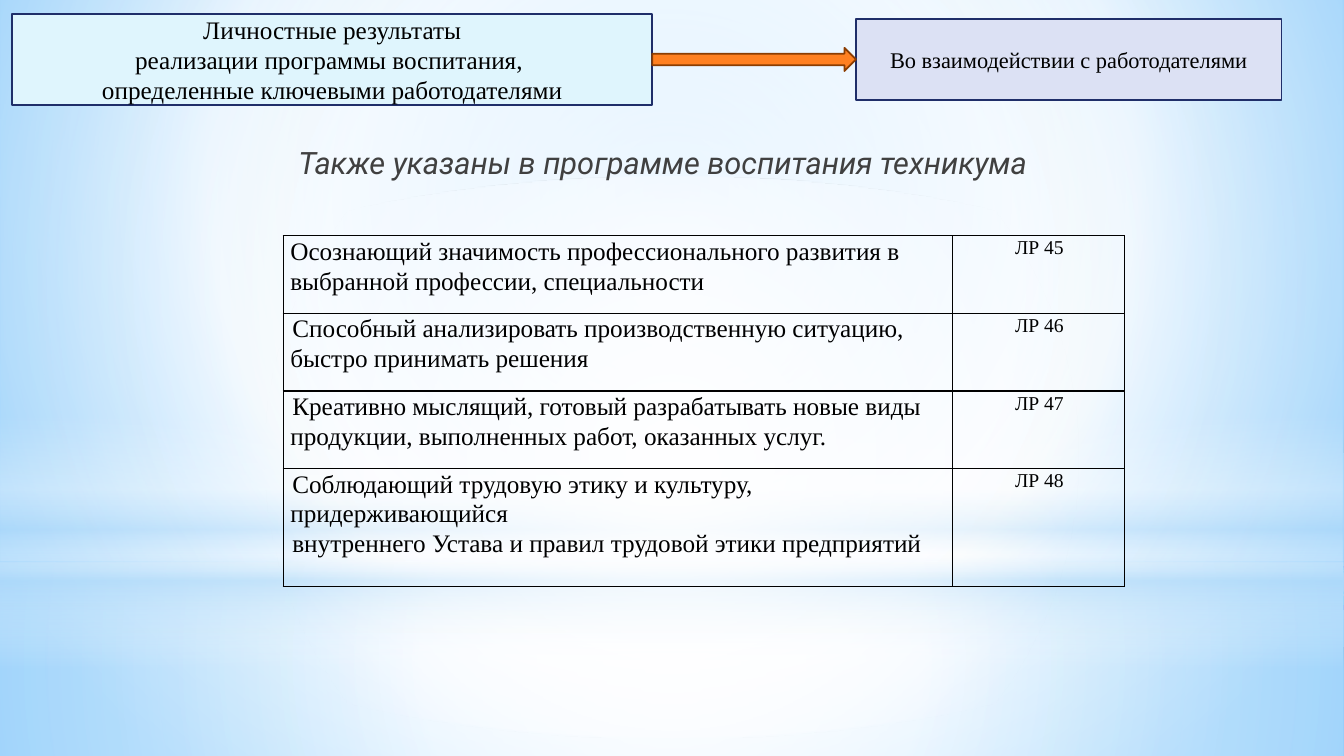
import pptx
import pptx.util
import pptx.oxml
import pptx.oxml.ns
import pptx.dml.color
import pptx.enum.shapes
import pptx.enum.text

Inches, Pt = pptx.util.Inches, pptx.util.Pt
qn = pptx.oxml.ns.qn
SHAPE = pptx.enum.shapes.MSO_SHAPE
ALIGN = pptx.enum.text.PP_ALIGN
ANCHOR = pptx.enum.text.MSO_ANCHOR

HEX = {
    "white": "FFFFFF", "mist": "B4DCFA", "sky": "9ED5FF", "blue": "5BB9FF",
    "cyan": "DFF5FD", "lilac": "DCE1F4", "navy": "1F2E69",
    "orange": "FF8021", "brown": "8B3D02", "black": "000000", "gray": "404040",
}
SERIF = "Times New Roman"
GOALS = [
    (["Осознающий значимость профессионального развития в выбранной "
      "профессии, специальности"], "ЛР 45"),
    (["Способный анализировать производственную ситуацию, быстро "
      "принимать решения"], "ЛР 46"),
    (["Креативно мыслящий, готовый разрабатывать новые виды продукции, "
      "выполненных работ, оказанных услуг."], "ЛР 47"),
    (["Соблюдающий трудовую этику и культуру, придерживающийся",
      "внутреннего Устава и правил трудовой этики предприятий"], "ЛР 48"),
]


def color(name):
    return pptx.dml.color.RGBColor.from_string(HEX[name])


def shade(fill, owner, stops, focus=None):
    """Fill with (position, colour, opacity) stops: around focus, or downwards."""
    fill.solid()
    marks = "".join(
        f'<a:gs pos="{pos * 1000}"><a:srgbClr val="{HEX[name]}">'
        f'<a:alpha val="{alpha * 1000}"/></a:srgbClr></a:gs>'
        for pos, name, alpha in stops)
    if focus:
        sides = " ".join(f'{side}="{part * 1000}"' for side, part in zip("ltrb", focus))
        way = f'<a:path path="circle"><a:fillToRect {sides}/></a:path>'
    else:
        way = '<a:lin ang="5400000" scaled="0"/>'
    grad = pptx.oxml.parse_xml(
        f'<a:gradFill {pptx.oxml.ns.nsdecls("a")} rotWithShape="1">'
        f'<a:gsLst>{marks}</a:gsLst>{way}</a:gradFill>')
    solid = owner.find(qn("a:solidFill"))
    owner.replace(solid, grad)


def write(frame, lines, size, font=SERIF, ink="black", align=ALIGN.LEFT,
          italic=False, indent=0, **form):
    """Write one paragraph a line; form holds further paragraph formats."""
    frame.word_wrap = True
    for n, line in enumerate(lines):
        para = frame.add_paragraph() if n else frame.paragraphs[0]
        para.alignment = align
        for key, value in form.items():
            setattr(para, key, value)
        props = para._p.get_or_add_pPr()
        props.set("marL", "0")
        props.set("indent", str(Inches(indent)))
        run = para.add_run()
        run.text = line
        for key, value in {"size": Pt(size), "name": font, "italic": italic}.items():
            setattr(run.font, key, value)
        run.font.color.rgb = color(ink)


def add(slide, kind, box):
    shape = slide.shapes.add_shape(kind, *map(Inches, box))
    shape.shadow.inherit = False
    return shape


def block(slide, kind, box, fill, edge):
    shape = add(slide, kind, box)
    shape.fill.solid()
    shape.fill.fore_color.rgb = color(fill)
    shape.line.color.rgb = color(edge)
    shape.line.width = Pt(1.25)
    return shape


def backdrop(slide, box):
    left, top, width, height = box
    shade(slide.background.fill, slide.element.find(".//" + qn("p:bgPr")),
          [(0, "sky", 100), (60, "white", 100), (100, "blue", 100)], (20, 10, 20, 60))
    mid = (50, 50, 50, 50)
    split = 5.58
    glows = [
        (SHAPE.RECTANGLE, split, height - split, mid,
         [(0, "white", 91), (37, "white", 76), (100, "mist", 79)]),
        (SHAPE.RECTANGLE, 0, split, mid,
         [(0, "white", 89), (48, "white", 62), (100, "mist", 79)]),
        (SHAPE.RECTANGLE, 4.12, 2.5, None,
         [(0, "white", 0), (29, "white", 30), (45, "mist", 40),
          (55, "white", 26), (65, "mist", 60), (100, "white", 0)]),
        (SHAPE.OVAL, 1.75, split, mid, [(0, "white", 100), (56, "white", 0)]),
    ]
    for kind, down, tall, focus, stops in glows:
        shape = add(slide, kind, (left, top + down, width, tall))
        shape.line.fill.background()
        shade(shape.fill, shape.element.spPr, stops, focus)


def header(slide, box):
    """Two boxes at the ends of the band, with an arrow from one to the other."""
    left, top, width, height = box
    wide, narrow, low, thick = 6.35, 4.22, 0.8, 0.23
    parts = [
        ((left, top, wide, height), "cyan", 18,
         ["Личностные результаты", "реализации программы воспитания, ",
          "определенные ключевыми работодателями"]),
        ((left + width - narrow, top + (height - low) / 2, narrow, low), "lilac", 16,
         ["Во взаимодействии с работодателями"]),
    ]
    for place, fill, size, lines in parts:
        shape = block(slide, SHAPE.RECTANGLE, place, fill, "navy")
        shape.text_frame.vertical_anchor = ANCHOR.MIDDLE
        write(shape.text_frame, lines, size, align=ALIGN.CENTER)
    gap = width - wide - narrow
    block(slide, SHAPE.RIGHT_ARROW,
          (left + wide, top + (height - thick) / 2, gap, thick), "orange", "brown")


def heading(slide, box):
    title = slide.shapes.title
    for key, value in zip(("left", "top", "width", "height"), box):
        setattr(title, key, Inches(value))
    title.text_frame.vertical_anchor = ANCHOR.TOP
    title.text_frame.auto_size = pptx.enum.text.MSO_AUTO_SIZE.NONE
    write(title.text_frame, ["Также указаны в программе воспитания техникума"],
          22, "Roboto", "gray", italic=True, indent=0.05, space_after=Pt(3))
    title.element.getparent().append(title.element)


def border(cell):
    props = cell._tc.get_or_add_tcPr()
    for n, side in enumerate(("lnL", "lnR", "lnT", "lnB")):
        props.insert(n, pptx.oxml.parse_xml(
            f'<a:{side} {pptx.oxml.ns.nsdecls("a")} w="{Pt(1)}"><a:solidFill>'
            f'<a:srgbClr val="{HEX["black"]}"/></a:solidFill></a:{side}>'))


def goals(slide, box):
    table = slide.shapes.add_table(len(GOALS), 2, *map(Inches, box)).table
    table.first_row = table.horz_banding = False
    code = 1.7
    for col, width in zip(table.columns, (box[2] - code, code)):
        col.width = Inches(width)
    for n, (row, (lines, mark)) in enumerate(zip(table.rows, GOALS)):
        row.height = Inches(0.77 if len(lines) == 1 else 1.17)
        looks = [(lines, 18, ALIGN.LEFT, 0.02 if n else 0),
                 ([mark], 14, ALIGN.CENTER, 0.02)]
        for cell, (words, size, align, indent) in zip(row.cells, looks):
            cell.fill.background()
            cell.margin_left = cell.margin_right = Inches(0.07)
            cell.margin_top = cell.margin_bottom = 0
            write(cell.text_frame, words, size, align=align, indent=indent,
                  line_spacing=1.07)
            border(cell)


def main():
    deck = pptx.Presentation()
    deck.slide_width, deck.slide_height = Inches(13.33), Inches(7.5)
    slide = deck.slides.add_slide(deck.slide_layouts[5])
    backdrop(slide, (0, 0, 13.33, 7.5))
    header(slide, (0.12, 0.14, 12.59, 0.9))
    goals(slide, (2.81, 2.34, 8.34, 3.48))
    heading(slide, (2.81, 1.38, 9.33, 0.57))
    deck.save("out.pptx")


if __name__ == "__main__":
    main()
